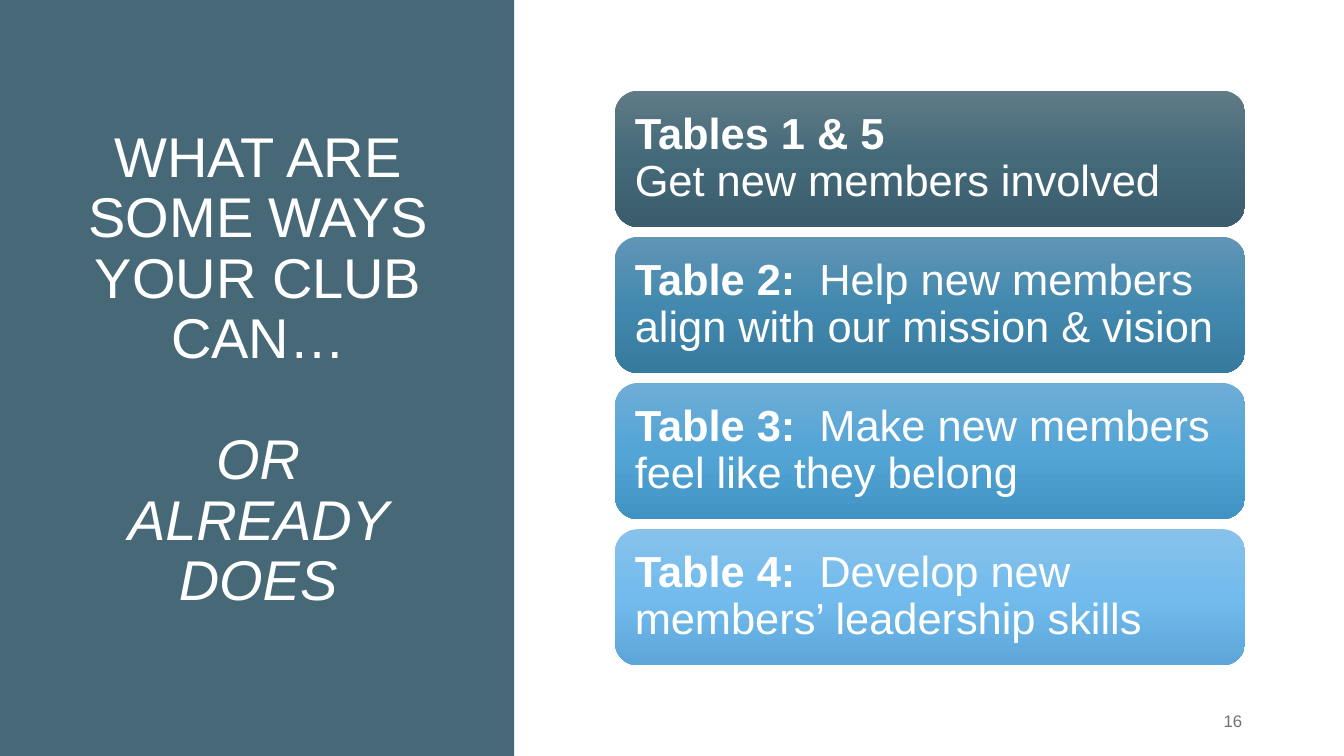
from copy import deepcopy
from dataclasses import dataclass

from pptx import Presentation
from pptx.dml.color import RGBColor
from pptx.enum.shapes import MSO_SHAPE
from pptx.enum.text import MSO_ANCHOR, PP_ALIGN
from pptx.oxml.ns import qn
from pptx.util import Inches, Pt

RECTANGLE = MSO_SHAPE.RECTANGLE
ROUNDED = MSO_SHAPE.ROUNDED_RECTANGLE
MIDDLE = MSO_ANCHOR.MIDDLE
LEFT, CENTER, RIGHT = PP_ALIGN.LEFT, PP_ALIGN.CENTER, PP_ALIGN.RIGHT


@dataclass(frozen=True)
class Theme:
    """Colours, font and type sizes of the slide."""
    font: str = "Arial"
    panel: str = "476977"
    light: str = "FFFFFF"
    muted: str = "757070"
    title_size: int = 40
    card_size: int = 31
    number_size: int = 12
    line_spacing: float = 0.9


@dataclass(frozen=True)
class Card:
    """A discussion topic with its table label and gradient."""
    label: str
    topic: str
    gradient: tuple[str, str, str]
    break_after_label: bool = False


THEME = Theme()
CARDS = (
    Card("Tables 1 & 5", "Get new members involved", ("607A86", "446A79", "3A5C6C"), True),
    Card("Table 2:", "  Help new members align with our mission & vision",
         ("6095B5", "4389AF", "367B9E")),
    Card("Table 3:", "  Make new members feel like they belong",
         ("6EADD6", "53A5D6", "4193C4")),
    Card("Table 4:", "  Develop new members’ leadership skills",
         ("88C2EB", "71BBED", "5CA6D9")),
)
CARD_TOP, CARD_PITCH = 0.9, 1.45


def style(p, size: int, color: str, align=LEFT, spacing: float = 1.0) -> None:
    """Set the font, alignment and line spacing of a paragraph."""
    p.font.name = THEME.font
    p.font.size = Pt(size)
    p.font.color.rgb = RGBColor.from_string(color)
    p.alignment = align
    p.line_spacing = spacing


def add_text_box(slide, left: float, top: float, width: float, height: float):
    """Add a wrapping, vertically centred text box and return its frame."""
    tf = slide.shapes.add_textbox(
        Inches(left), Inches(top), Inches(width), Inches(height)).text_frame
    tf.word_wrap = True
    tf.vertical_anchor = MIDDLE
    return tf


def add_panel(slide) -> None:
    """Add the solid panel behind the title."""
    sp = slide.shapes.add_shape(RECTANGLE, 0, 0, Inches(5.1), Inches(7.5))
    sp.shadow.inherit = False
    sp.fill.solid()
    sp.fill.fore_color.rgb = RGBColor.from_string(THEME.panel)
    sp.line.fill.background()


def add_title(slide) -> None:
    """Add the question and its italic follow-up."""
    tf = add_text_box(slide, 0.7, 0.88, 3.72, 5.6)
    question, follow_up = tf.paragraphs[0], tf.add_paragraph()
    question.text = "WHAT ARE SOME WAYS YOUR CLUB CAN…"
    follow_up.text = "OR ALREADY DOES"
    for p in (question, follow_up):
        style(p, THEME.title_size, THEME.light, CENTER, THEME.line_spacing)
    follow_up.font.italic = True
    follow_up.space_before = Pt(43)


def fill_gradient(sp, colors: tuple[str, str, str]) -> None:
    """Fill a shape from top to bottom with three evenly spaced colours."""
    sp.fill.gradient()
    sp.fill.gradient_angle = 270
    stops = sp._element.spPr.find(qn("a:gradFill")).find(qn("a:gsLst"))
    stops.insert(1, deepcopy(stops[0]))
    for i, (stop, color) in enumerate(zip(sp.fill.gradient_stops, colors)):
        stop.position = i / 2
        stop.color.rgb = RGBColor.from_string(color)


def add_card(slide, card: Card, top: float) -> None:
    """Add a rounded card with a bold label and its topic."""
    sp = slide.shapes.add_shape(ROUNDED, Inches(6.1), Inches(top), Inches(6.25), Inches(1.35))
    sp.shadow.inherit = False
    sp.line.fill.background()
    fill_gradient(sp, card.gradient)
    tf = sp.text_frame
    tf.word_wrap = True
    tf.vertical_anchor = MIDDLE
    tf.margin_left = tf.margin_right = tf.margin_top = tf.margin_bottom = Inches(0.13)
    p = tf.paragraphs[0]
    style(p, THEME.card_size, THEME.light, LEFT, THEME.line_spacing)
    r = p.add_run()
    r.text = card.label
    r.font.bold = True
    if card.break_after_label:
        p.add_line_break()
    p.add_run().text = card.topic


def add_slide_number(slide) -> None:
    """Add the slide number at the lower right."""
    p = add_text_box(slide, 9.42, 6.95, 3, 0.4).paragraphs[0]
    p.text = "16"
    style(p, THEME.number_size, THEME.muted, RIGHT)


def main() -> None:
    """Build and save the slide."""
    prs = Presentation()
    prs.slide_width, prs.slide_height = Inches(13.33), Inches(7.5)
    slide = prs.slides.add_slide(prs.slide_layouts[6])
    add_panel(slide)
    add_title(slide)
    for i, card in enumerate(CARDS):
        add_card(slide, card, CARD_TOP + i * CARD_PITCH)
    add_slide_number(slide)
    prs.save("out.pptx")


if __name__ == "__main__":
    main()
